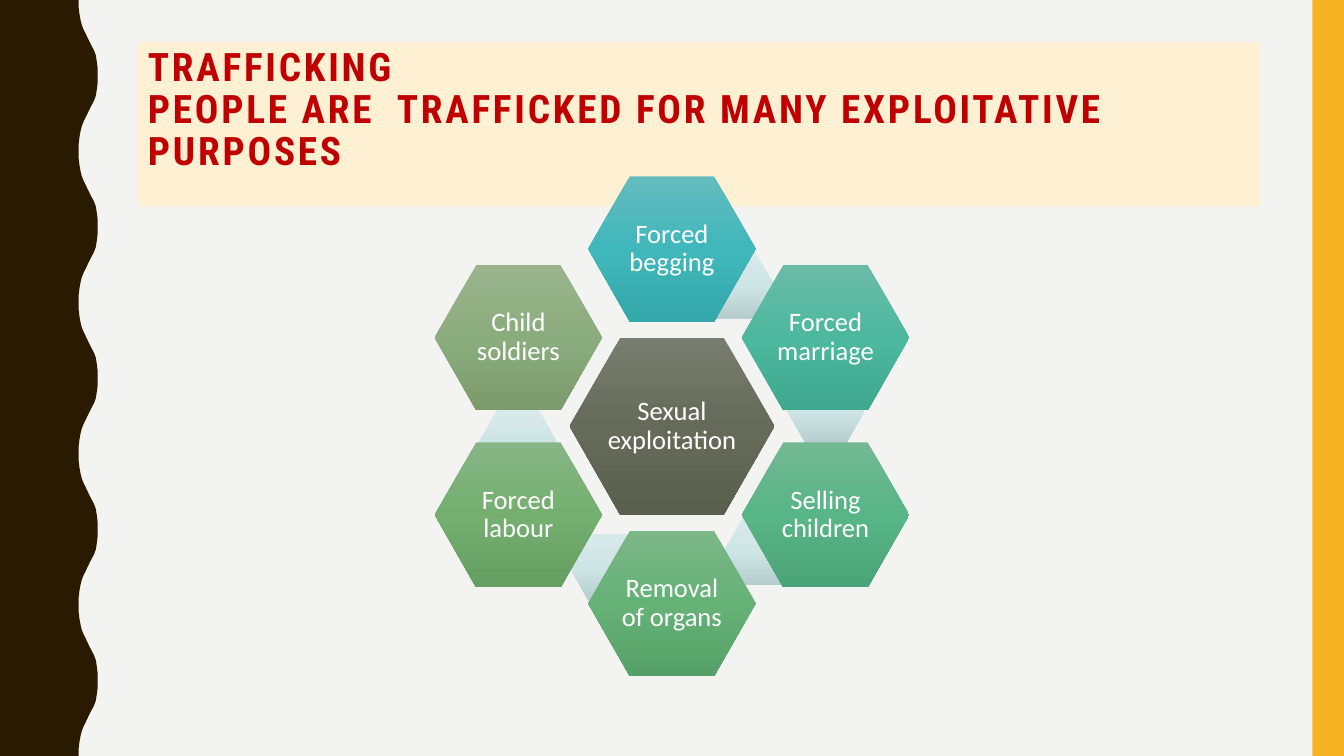
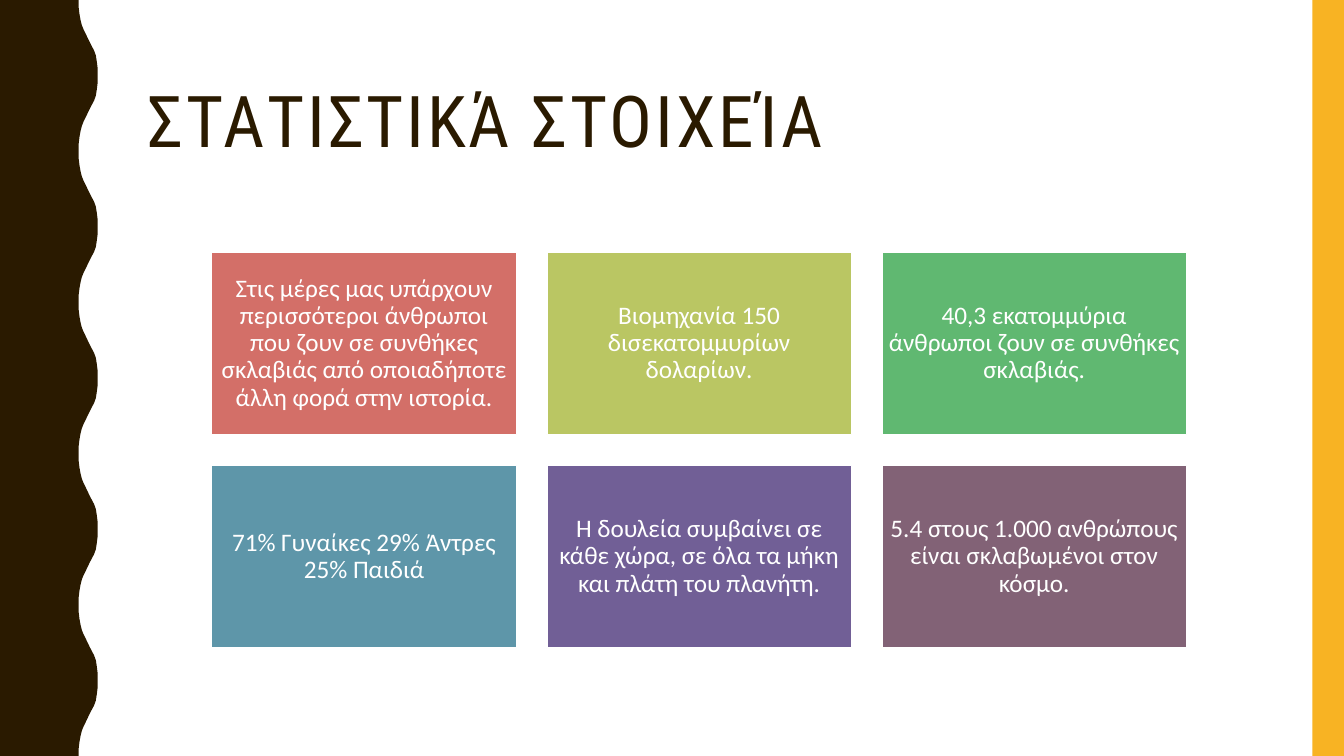
from collections import namedtuple
from math import cos, radians, sin

from lxml.etree import SubElement
from pptx import Presentation
from pptx.dml.color import RGBColor
from pptx.enum.shapes import MSO_SHAPE
from pptx.enum.text import MSO_ANCHOR, PP_ALIGN
from pptx.oxml.ns import qn
from pptx.util import Pt

Box = namedtuple("Box", "left top width height")

SLIDE = Box(0, 0, 960, 540)
TITLE = Box(98.6, 30.2, 801.4, 117.4)
DIAGRAM = Box(310, 126, 340, 357)
TILES = Box(151.3, 180, 696.2, 283)

BROWN = "2A1A00"
YELLOW = "F8B323"
WHITE = "FFFFFF"
RED = "C00000"
CREAM = "FEF0D3"
PALE_GREY = "F3F3F2"

TITLE_FONT = "Roboto Condensed"
BODY_FONT = "Calibri"

WAVE_LEFT = 56.2
WAVE_PERIOD = 108
HALF_WAVE = [
    (0, 0), (0, 5), (0.6, 10), (1.4, 14.4), (2.3, 18), (3.5, 21), (5, 24),
    (6.5, 27.2), (8, 30.3), (9.5, 33.2), (11, 36), (12.3, 39.6), (13, 44),
    (13.6, 49), (13.6, 54),
]

CORE_GRADIENT = ("797D70", "656B58", "5A604E")
LINK_GRADIENT = ("D8E9EA", "CEE5E6", "B6CDCE")
PURPOSES = [
    ("Forced begging", ("64BBBE", "40B7BB", "34A8AB")),
    ("Forced marriage", ("6BBCA7", "4CB89E", "3FA88F")),
    ("Selling children", ("73B994", "58B585", "4BA477")),
    ("Removal of organs", ("7CB788", "65B176", "56A167")),
    ("Forced labour", ("87B585", "74AF70", "649E61")),
    ("Child soldiers", ("9AB48E", "8BAC7C", "7B9B6C")),
]

STATISTICS = [
    ("Στις μέρες μας υπάρχουν περισσότεροι άνθρωποι που ζουν σε συνθήκες "
     "σκλαβιάς από οποιαδήποτε άλλη φορά στην ιστορία.", "D36F68"),
    ("Βιομηχανία 150 δισεκατομμυρίων δολαρίων.", "BAC663"),
    ("40,3 εκατομμύρια άνθρωποι ζουν σε συνθήκες σκλαβιάς.", "60B871"),
    ("71% Γυναίκες 29% Άντρες 25% Παιδιά", "5E96A9"),
    ("Η δουλεία συμβαίνει σε κάθε χώρα, σε όλα τα μήκη και πλάτη του πλανήτη.",
     "715F96"),
    ("5.4 στους 1.000 ανθρώπους είναι σκλαβωμένοι στον κόσμο.", "826276"),
]


def paint(color_format, color):
    color_format.rgb = RGBColor.from_string(color)


def fill_solid(fill, color):
    fill.solid()
    paint(fill.fore_color, color)


def fill_gradient(shape, colors):
    shape.fill.gradient()
    shape.fill.gradient_angle = 270
    stops = shape.fill._xPr.find(qn("a:gradFill")).find(qn("a:gsLst"))
    for stop in list(stops):
        stops.remove(stop)
    for index, color in enumerate(colors):
        stop = SubElement(stops, qn("a:gs"), pos=str(index * 50000))
        SubElement(stop, qn("a:srgbClr"), val=color)


def write_text(shape, text, font=BODY_FONT, size=18, color=WHITE, bold=False,
               spacing=0, align=PP_ALIGN.CENTER, anchor=MSO_ANCHOR.MIDDLE,
               insets=(2, 2)):
    frame = shape.text_frame
    frame.word_wrap = True
    frame.vertical_anchor = anchor
    frame.margin_left = frame.margin_right = Pt(insets[0])
    frame.margin_top = frame.margin_bottom = Pt(insets[1])
    paragraph = frame.paragraphs[0]
    paragraph.text = text
    paragraph.alignment = align
    paragraph.line_spacing = 0.9
    for run in paragraph.runs:
        run.font.name = font
        run.font.size = Pt(size)
        run.font.bold = bold
        paint(run.font.color, color)
        if spacing:
            run.font._element.set("spc", str(spacing * 100))


def add_shape(slide, kind, box):
    shape = slide.shapes.add_shape(kind, *map(Pt, box))
    shape.shadow.inherit = False
    shape.line.fill.background()
    return shape


def add_wave(slide, box):
    crest = HALF_WAVE + [(x, WAVE_PERIOD - y) for x, y in HALF_WAVE[-2::-1]]
    points = [
        (box.left + WAVE_LEFT + x, box.top + start + y)
        for start in range(0, box.height, WAVE_PERIOD)
        for x, y in crest
    ]
    points.append((box.left, box.top + box.height))
    builder = slide.shapes.build_freeform(Pt(box.left), Pt(box.top))
    builder.add_line_segments([(Pt(x), Pt(y)) for x, y in points], close=True)
    wave = builder.convert_to_shape()
    wave.shadow.inherit = False
    wave.line.fill.background()
    fill_solid(wave.fill, BROWN)


def add_base_slide(presentation, background):
    slide = presentation.slides.add_slide(presentation.slide_layouts[6])
    fill_solid(slide.background.fill, background)
    add_wave(slide, SLIDE)
    band = add_shape(slide, MSO_SHAPE.RECTANGLE, Box(937.5, 0, 22.5, SLIDE.height))
    fill_solid(band.fill, YELLOW)
    return slide


def add_title(slide, box, text, fill=None, **text_format):
    title = slide.shapes.add_textbox(*map(Pt, box))
    if fill:
        fill_solid(title.fill, fill)
    write_text(title, text, font=TITLE_FONT, spacing=2, align=PP_ALIGN.LEFT,
               insets=(7.2, 3.6), **text_format)


def add_hexagon(slide, center, size, colors, text=None):
    (x, y), (width, height) = center, size
    box = Box(x - width / 2, y - height / 2, width, height)
    hexagon = add_shape(slide, MSO_SHAPE.HEXAGON, box)
    hexagon.adjustments[0] = 0.286
    fill_gradient(hexagon, colors)
    if text:
        write_text(hexagon, text, size=19)


def add_hexagon_ring(slide, box):
    center = (box.left + box.width / 2, box.top + box.height / 2)
    purpose_size = (119.5, 103.7)
    radius = (box.height - purpose_size[1]) / 2

    def around(distance, degrees):
        angle = radians(degrees)
        return (center[0] + distance * sin(angle),
                center[1] - distance * cos(angle))

    add_hexagon(slide, center, (146.2, 126.7), CORE_GRADIENT, "Sexual exploitation")
    for index, (text, colors) in enumerate(PURPOSES):
        degrees = index * 60
        if index < len(PURPOSES) - 1:
            add_hexagon(slide, around(110.5, degrees + 24.3), (55.4, 47.5),
                        LINK_GRADIENT)
        add_hexagon(slide, around(radius, degrees), purpose_size, colors, text)


def add_tile_grid(slide, box, columns=3, rows=2, gap=21.8):
    width = (box.width - gap * (columns - 1)) / columns
    height = (box.height - gap * (rows - 1)) / rows
    for index, (text, color) in enumerate(STATISTICS):
        row, column = divmod(index, columns)
        tile = add_shape(slide, MSO_SHAPE.RECTANGLE, Box(
            box.left + column * (width + gap), box.top + row * (height + gap),
            width, height))
        fill_solid(tile.fill, color)
        fill_solid(tile.line.fill, WHITE)
        tile.line.width = Pt(1)
        write_text(tile, text, insets=(5, 5))


def add_purposes_slide(presentation):
    slide = add_base_slide(presentation, PALE_GREY)
    add_title(slide, TITLE,
              "TRAFFICKING\vPEOPLE ARE  TRAFFICKED FOR MANY EXPLOITATIVE PURPOSES",
              fill=CREAM, size=28, color=RED, bold=True, anchor=MSO_ANCHOR.TOP)
    add_hexagon_ring(slide, DIAGRAM)


def add_statistics_slide(presentation):
    slide = add_base_slide(presentation, WHITE)
    add_title(slide, TITLE, "ΣΤΑΤΙΣΤΙΚΆ ΣΤΟΙΧΕΊΑ", size=51, color=BROWN)
    add_tile_grid(slide, TILES)


def main():
    presentation = Presentation()
    presentation.slide_width = Pt(SLIDE.width)
    presentation.slide_height = Pt(SLIDE.height)
    add_purposes_slide(presentation)
    add_statistics_slide(presentation)
    presentation.save("out.pptx")


if __name__ == "__main__":
    main()
